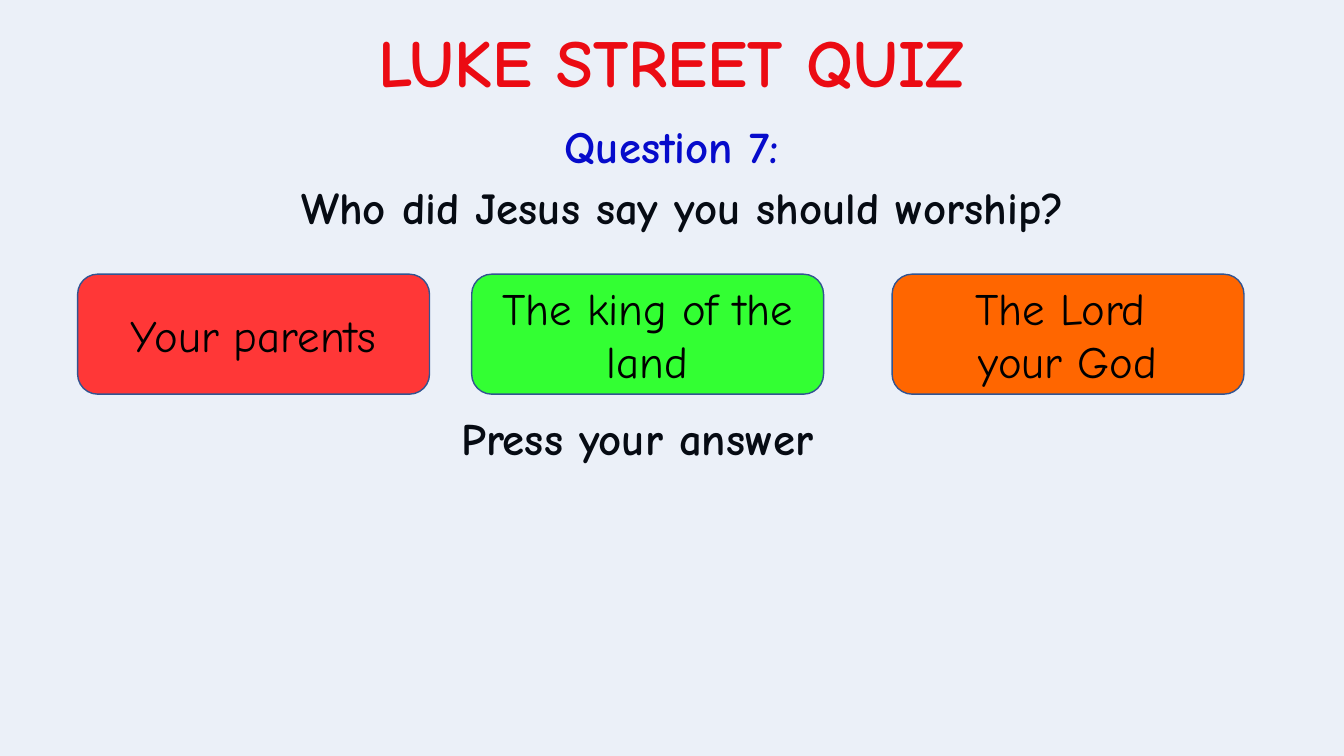
from lxml.etree import SubElement
from pptx import Presentation
from pptx.dml.color import RGBColor
from pptx.enum.shapes import MSO_SHAPE as Shape
from pptx.enum.text import MSO_ANCHOR as Anchor, MSO_AUTO_SIZE as AutoSize, PP_ALIGN as Align
from pptx.oxml.ns import qn
from pptx.util import Inches, Pt

WIDTH, HEIGHT = Inches(13.33), Inches(7.5)
FONT = "Comic Neue"
BLACK, RED, BLUE = "000000", "FF0000", "0000CC"
TINT, OUTLINE = "4472C4", "325491"

BUTTON_TOP, BUTTON_WIDTH, BUTTON_HEIGHT = 36.27, 26.18, 15.87
ANSWERS = [
    (5.78, "FF3737", ["Your parents"]),
    (35.1, "33FF33", ["The king of the land"]),
    (66.38, "FF6600", ["The Lord ", "your God"]),
]


def color(value):
    return RGBColor.from_string(value)


def area(left, top, width, height):
    """Turn percentages of the slide into lengths."""
    return [int(share * side / 100) for share, side in
            zip((left, top, width, height), (WIDTH, HEIGHT, WIDTH, HEIGHT))]


def write(shape, lines, ink=BLACK, size=32, bold=True, align=Align.CENTER,
          anchor=Anchor.TOP, wrap=True, before=0, spacing=1.0):
    frame = shape.text_frame
    frame.auto_size = AutoSize.NONE
    frame.word_wrap = wrap
    frame.vertical_anchor = anchor
    frame.text = "\n".join(lines)
    for para in frame.paragraphs:
        para.alignment = align
        para.space_before = Pt(before)
        para.line_spacing = spacing
        para.font.name = FONT
        para.font.size = Pt(size)
        para.font.bold = bold
        para.font.color.rgb = color(ink)


def add_title(page, text):
    title = page.shapes.title
    title.left, title.top, title.width, title.height = area(23.4, 2, 53.1, 12.13)
    write(title, [text], RED, size=48, wrap=False)


def add_text(page, place, text, **style):
    write(page.shapes.add_textbox(*area(*place)), [text], **style)


def add_filled(page, kind, place, fill):
    shape = page.shapes.add_shape(kind, *area(*place))
    shape.shadow.inherit = False
    shape.fill.solid()
    shape.fill.fore_color.rgb = color(fill)
    return shape


def add_tint(page):
    """Lay a 10% blue veil over the whole slide."""
    veil = add_filled(page, Shape.RECTANGLE, (0, 0, 100, 100), TINT)
    veil.line.fill.background()
    tone = veil.fill._xPr.find(qn("a:solidFill"))[0]
    SubElement(tone, qn("a:alpha"), val="10000")


def add_answer(page, left, fill, lines):
    place = (left, BUTTON_TOP, BUTTON_WIDTH, BUTTON_HEIGHT)
    button = add_filled(page, Shape.ROUNDED_RECTANGLE, place, fill)
    button.line.color.rgb = color(OUTLINE)
    button.line.width = Pt(1)
    write(button, lines, bold=False, anchor=Anchor.MIDDLE)


def main():
    deck = Presentation()
    deck.slide_width, deck.slide_height = WIDTH, HEIGHT
    page = deck.slides.add_slide(deck.slide_layouts.get_by_name("Title Only"))

    add_title(page, "LUKE STREET QUIZ")
    add_text(page, (7.43, 23.6, 86.78, 15.87), "Who did Jesus say you should worship?",
             before=10, spacing=Pt(36))
    add_text(page, (33.6, 54.53, 50.48, 9.6), "Press your answer",
             align=Align.LEFT, before=7.5, spacing=0.9)
    add_text(page, (33.45, 15.07, 33.08, 8.53), "Question 7:", ink=BLUE)
    add_tint(page)
    for left, fill, lines in ANSWERS:
        add_answer(page, left, fill, lines)

    deck.save("out.pptx")


if __name__ == "__main__":
    main()
